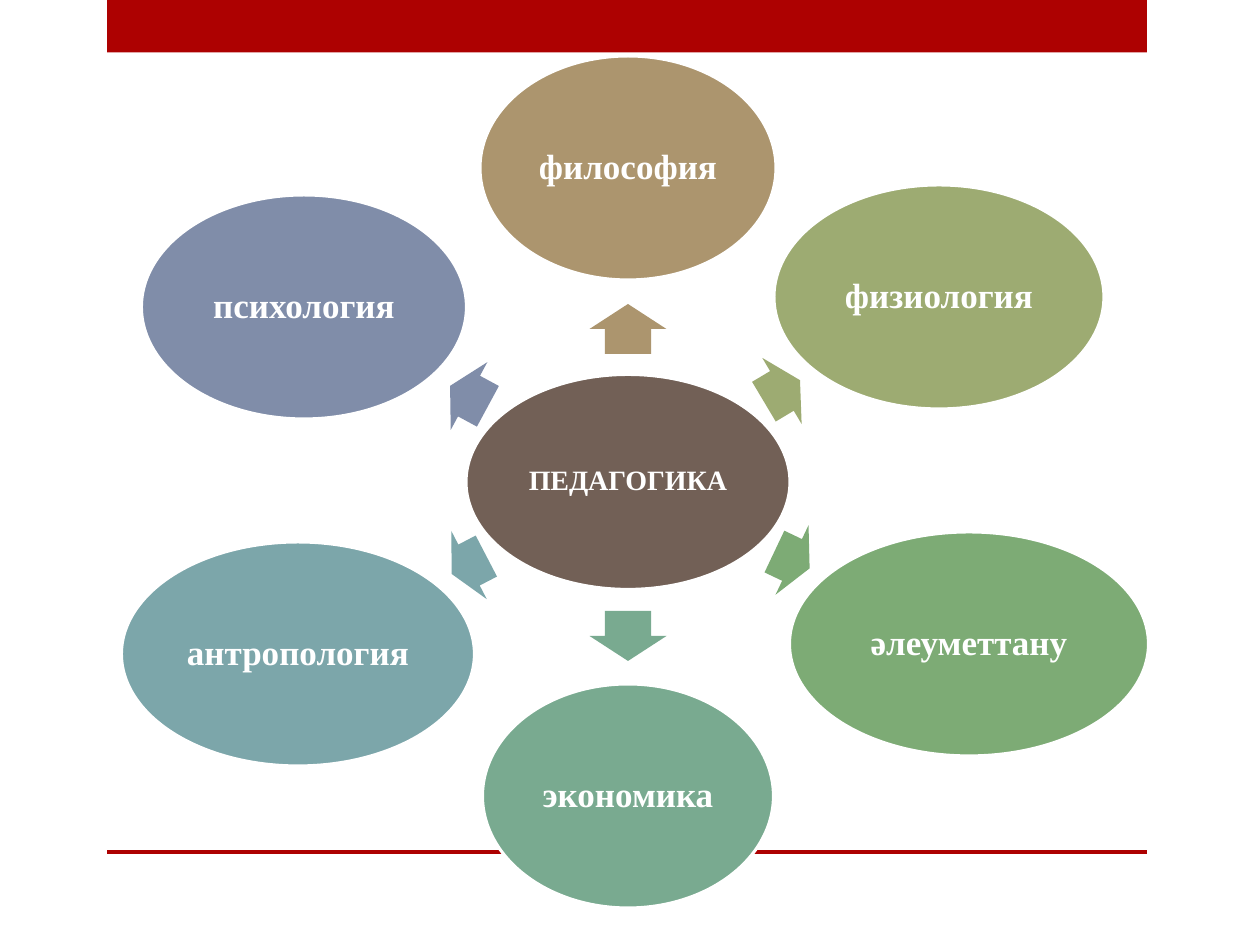
from pptx import Presentation
from pptx.dml.color import RGBColor
from pptx.enum.shapes import MSO_SHAPE as SHAPE
from pptx.enum.text import MSO_ANCHOR as ANCHOR, PP_ALIGN as ALIGN
from pptx.util import Pt

PX = 914400 / 126
WHITE = RGBColor(0xFF, 0xFF, 0xFF)
RED = RGBColor(0xAD, 0x01, 0x01)
BROWN = RGBColor(0x72, 0x60, 0x56)
TAN = RGBColor(0xAC, 0x95, 0x6E)
OLIVE = RGBColor(0x9D, 0xAB, 0x72)
GREEN = RGBColor(0x7D, 0xAB, 0x75)
MINT = RGBColor(0x79, 0xAA, 0x90)
TEAL = RGBColor(0x7C, 0xA6, 0xAA)
BLUE = RGBColor(0x80, 0x8D, 0xA9)

prs = Presentation()
prs.slide_width, prs.slide_height = round(1260 * PX), round(945 * PX)
s = prs.slides.add_slide(prs.slide_layouts[6])


def add_centred(kind, cx, cy, w, h, color):
    box = (cx - w / 2, cy - h / 2, w, h)
    sp = s.shapes.add_shape(kind, *[round(v * PX) for v in box])
    sp.shadow.inherit = False
    sp.fill.solid()
    sp.fill.fore_color.rgb = color
    sp.line.fill.background()
    return sp


def add_oval(text, size, cx, cy, w, h, color):
    sp = add_centred(SHAPE.OVAL, cx, cy, w, h, color)
    sp.line.color.rgb = WHITE
    sp.line.width = Pt(1.75)
    tf = sp.text_frame
    inset = round(size / 5 * PX)
    frame = {"word_wrap": True, "vertical_anchor": ANCHOR.MIDDLE,
             "margin_left": inset, "margin_right": inset,
             "margin_top": inset, "margin_bottom": inset}
    for name, value in frame.items():
        setattr(tf, name, value)
    p = tf.paragraphs[0]
    p.alignment = ALIGN.CENTER
    p.line_spacing = 0.9
    r = p.add_run()
    r.text = text
    font = {"name": "Times New Roman", "size": Pt(size), "bold": True}
    for name, value in font.items():
        setattr(r.font, name, value)
    r.font.color.rgb = WHITE


for cy, h in [(26, 53), (852, 4)]:
    add_centred(SHAPE.RECTANGLE, 627, cy, 1040, h, RED)

add_oval("ПЕДАГОГИКА", 16, 628, 482, 324, 215, BROWN)

sciences = [
    ("философия", TAN, (628, 168, 296), (628, 329, 50, 270)),
    ("физиология", OLIVE, (939, 297, 330), (782, 391, 42, 329.2)),
    ("әлеуметтану", GREEN, (969, 644, 359), (792, 560, 39, 25.4)),
    ("экономика", MINT, (628, 796, 291), (628, 636, 50, 90)),
    ("антропология", TEAL, (298, 654, 353), (469, 565, 39, 152.5)),
    ("психология", BLUE, (304, 307, 325), (469, 396, 43, 208.4)),
]
for text, color, (cx, cy, w), (ax, ay, length, angle) in sciences:
    arrow = add_centred(SHAPE.RIGHT_ARROW, ax, ay, length, 77, color)
    arrow.rotation = angle
    arrow.adjustments[0] = 0.6
    arrow.adjustments[1] = 0.5
    add_oval(text, 20, cx, cy, w, 224, color)

prs.save("out.pptx")
